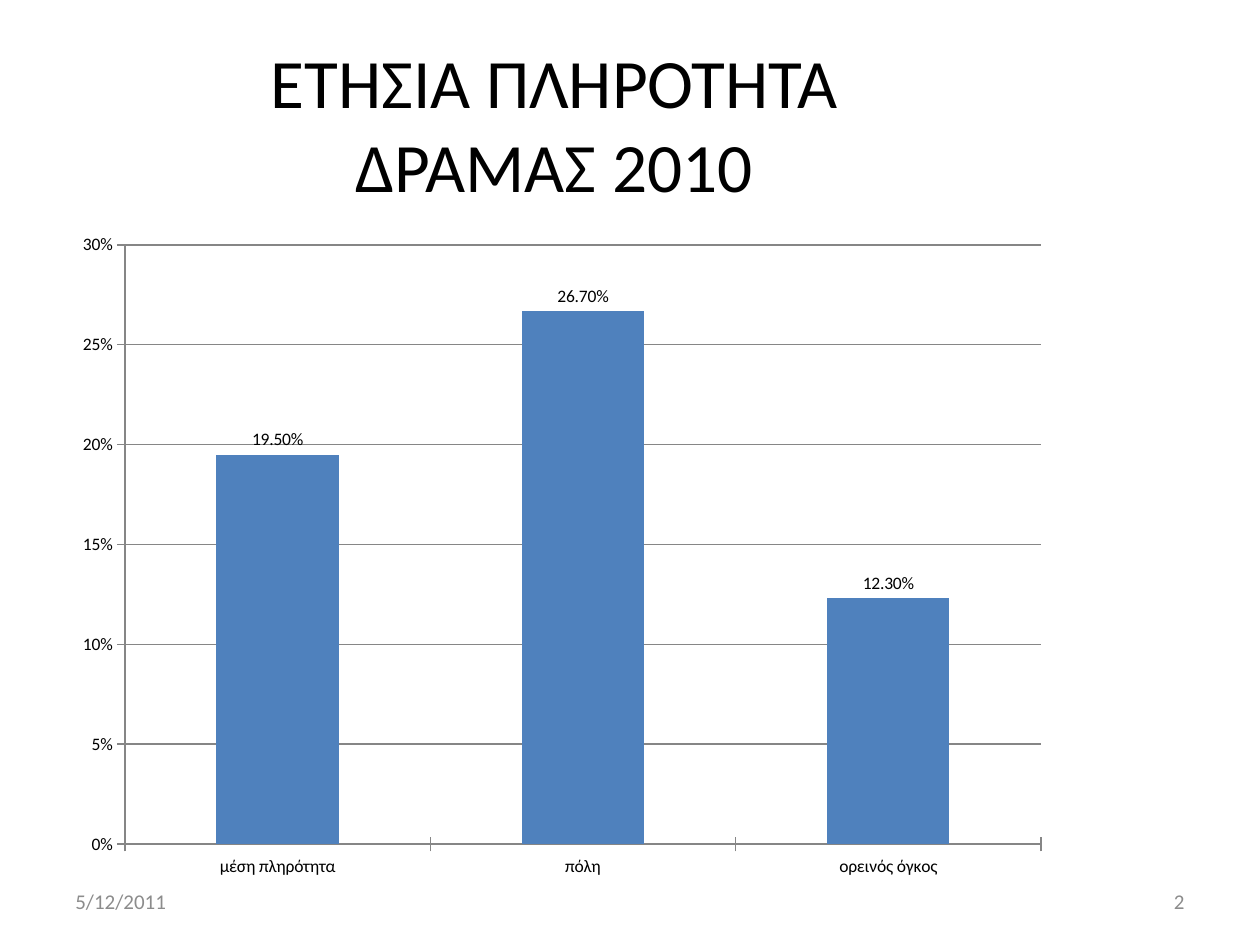
from pptx import Presentation
from pptx.chart.data import CategoryChartData
from pptx.dml.color import RGBColor
from pptx.enum.chart import XL_CHART_TYPE, XL_LABEL_POSITION, XL_TICK_MARK
from pptx.enum.text import MSO_ANCHOR, MSO_AUTO_SIZE, PP_ALIGN
from pptx.util import Inches, Pt


def rgb(value):
    return RGBColor.from_string(value)


class SlideBuilder:
    FONT = "Calibri"
    BLACK, GRAY, LINE, BAR = "000000", "8C8C8C", "868686", "4F81BD"
    LEFT, WIDTH = 0.5, 7.92  # shared by title and chart

    def __init__(self, prs):
        self.slide = prs.slides.add_slide(prs.slide_layouts[5])

    def style(self, font, size, color):
        font.name, font.size = self.FONT, Pt(size)
        font.color.rgb = rgb(color)

    def add_text(self, tf, lines, size, color, align):
        tf.word_wrap = True
        tf.auto_size = MSO_AUTO_SIZE.NONE
        tf.vertical_anchor = MSO_ANCHOR.MIDDLE
        p = tf.paragraphs[0]
        p.alignment = align
        for i, line in enumerate(lines):
            if i:
                p.add_line_break()
            r = p.add_run()
            r.text = line
            self.style(r.font, size, color)

    def title(self, lines, top, height):
        sp = self.slide.shapes.title
        sp.left, sp.top = Inches(self.LEFT), Inches(top)
        sp.width, sp.height = Inches(self.WIDTH), Inches(height)
        self.add_text(sp.text_frame, lines, 39.6, self.BLACK, PP_ALIGN.CENTER)

    def footer(self, text, left, align):
        sp = self.slide.shapes.add_textbox(
            Inches(left), Inches(6.95), Inches(2.33), Inches(0.4))
        self.add_text(sp.text_frame, [text], 12, self.GRAY, align)

    def column_chart(self, values, top, height):
        data = CategoryChartData(number_format="0.00%")
        data.categories = list(values)
        data.add_series("Series 1", list(values.values()))
        chart = self.slide.shapes.add_chart(
            XL_CHART_TYPE.COLUMN_CLUSTERED, Inches(self.LEFT), Inches(top),
            Inches(self.WIDTH), Inches(height), data).chart
        chart.has_legend = chart.has_title = False
        self.style(chart.font, 10, self.BLACK)

        # Bars and their labels
        plot = chart.plots[0]
        plot.gap_width = 150
        plot.vary_by_categories = False
        series = plot.series[0]
        series.format.fill.solid()
        series.format.fill.fore_color.rgb = rgb(self.BAR)
        labels = series.data_labels
        labels.show_value = True
        labels.number_format = "0.00%"
        labels.number_format_is_linked = False
        labels.position = XL_LABEL_POSITION.OUTSIDE_END
        self.style(labels.font, 10, self.BLACK)

        # Axes and gridlines
        value_axis = chart.value_axis
        value_axis.minimum_scale, value_axis.maximum_scale = 0, 0.3
        value_axis.major_unit = 0.05
        value_axis.has_major_gridlines = True
        value_axis.tick_labels.number_format = "0%"
        value_axis.tick_labels.number_format_is_linked = False
        for axis in (chart.category_axis, value_axis):
            axis.major_tick_mark = XL_TICK_MARK.CROSS
            axis.format.line.color.rgb = rgb(self.LINE)
        value_axis.major_gridlines.format.line.color.rgb = rgb(self.LINE)


def main():
    prs = Presentation()
    prs.slide_width, prs.slide_height = Inches(10), Inches(7.5)
    s = SlideBuilder(prs)

    # Heading
    s.title(["ΕΤΗΣΙΑ ΠΛΗΡΟΤΗΤΑ ", "ΔΡΑΜΑΣ 2010 "], 0.35, 1.25)

    # Occupancy by area
    s.column_chart({"μέση πληρότητα": 0.195, "πόλη": 0.267,
                    "ορεινός όγκος": 0.123}, 1.76, 5.3)

    # Date and slide number
    s.footer("5/12/2011", 0.5, PP_ALIGN.LEFT)
    s.footer("2", 7.17, PP_ALIGN.RIGHT)

    prs.save("out.pptx")


if __name__ == "__main__":
    main()
